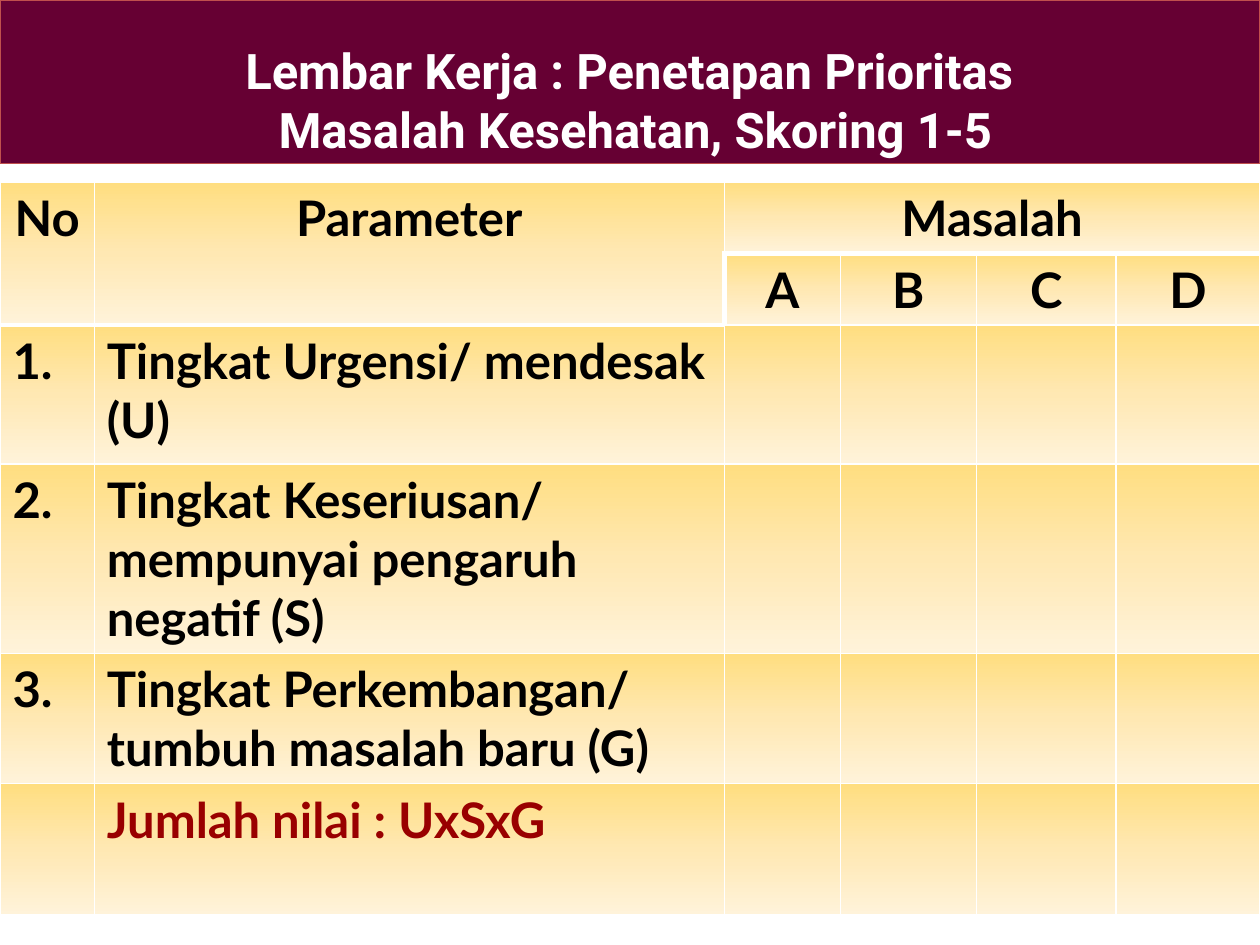
from dataclasses import dataclass

import pptx
import pptx.dml.color
import pptx.enum.shapes
import pptx.enum.text
import pptx.oxml
import pptx.oxml.ns
import pptx.presentation
import pptx.slide
import pptx.table
import pptx.text.text
import pptx.util
from pptx.dml.color import RGBColor
from pptx.util import Cm, Pt

MAROON = RGBColor(0x66, 0x00, 0x33)
BRICK = RGBColor(0xC0, 0x50, 0x4D)
WHITE = RGBColor(0xFF, 0xFF, 0xFF)
BLACK = RGBColor(0x00, 0x00, 0x00)
RED = RGBColor(0x99, 0x00, 0x00)
GOLD = RGBColor(0xFF, 0xDE, 0x80)
CREAM = RGBColor(0xFF, 0xE8, 0xB3)
IVORY = RGBColor(0xFF, 0xF3, 0xDA)

CENTER = pptx.enum.text.PP_ALIGN.CENTER
LEFT = pptx.enum.text.PP_ALIGN.LEFT
TEXT_SIZE = Pt(28)
THIN, THICK = Pt(1), Pt(3)

COLUMN_WIDTHS = [1.9, 12.7, 2.34, 2.74, 2.82, 2.9]
ROW_HEIGHTS = [1.44, 1.44, 2.8, 3.82, 2.62, 2.64]
FIRST_PROBLEM = 2
FIRST_PARAMETER = 2
TITLE = ["Lembar Kerja : Penetapan Prioritas ", "Masalah Kesehatan, Skoring 1-5"]


@dataclass(frozen=True)
class Heading:
    text: str
    row: int
    column: int
    last_row: int
    last_column: int


@dataclass(frozen=True)
class Parameter:
    number: str
    text: str
    color: RGBColor = BLACK


HEADINGS = [
    Heading("No", 0, 0, 1, 0),
    Heading("Parameter", 0, 1, 1, 1),
    Heading("Masalah", 0, 2, 0, 5),
    *(Heading(letter, 1, column, 1, column)
      for column, letter in enumerate("ABCD", FIRST_PROBLEM)),
]
PARAMETERS = [
    Parameter("1.", "Tingkat Urgensi/ mendesak (U)"),
    Parameter("2.", "Tingkat Keseriusan/ mempunyai pengaruh negatif (S)"),
    Parameter("3.", "Tingkat Perkembangan/ tumbuh masalah baru (G)"),
    Parameter("", "Jumlah nilai : UxSxG", RED),
]


def write(para: pptx.text.text._Paragraph, text: str, font: str,
          color: RGBColor, alignment: pptx.enum.text.PP_ALIGN) -> None:
    para.text = text
    para.alignment = alignment
    para.font.name = font
    para.font.size = TEXT_SIZE
    para.font.bold = True
    para.font.color.rgb = color


def write_cell(cell: pptx.table._Cell, text: str, color: RGBColor = BLACK,
               alignment: pptx.enum.text.PP_ALIGN = LEFT) -> None:
    if text:
        write(cell.text_frame.paragraphs[0], text, "Lato", color, alignment)


def edge_widths(row: int, column: int) -> dict[str, int]:
    """Thick lines set the headings off from what they head."""
    problem = column >= FIRST_PROBLEM
    thick = {
        "L": row == 1 and column == FIRST_PROBLEM,
        "R": row == 1 and column == FIRST_PROBLEM - 1,
        "T": row == (1 if problem else FIRST_PARAMETER),
        "B": row == (0 if problem else FIRST_PARAMETER - 1),
    }
    return {side: THICK if heavy else THIN for side, heavy in thick.items()}


def style_cell(cell: pptx.table._Cell, row: int, column: int) -> None:
    """Add white borders, then the gradient, in the order the schema asks."""
    namespace = pptx.oxml.ns.nsdecls("a")
    properties = cell._tc.get_or_add_tcPr()
    for side, width in edge_widths(row, column).items():
        properties.append(pptx.oxml.parse_xml(
            f'<a:ln{side} {namespace} w="{int(width)}"><a:solidFill>'
            f'<a:srgbClr val="{WHITE}"/></a:solidFill></a:ln{side}>'))
    stops = "".join(
        f'<a:gs pos="{percent * 1000}"><a:srgbClr val="{color}"/></a:gs>'
        for percent, color in [(0, GOLD), (50, CREAM), (100, IVORY)])
    properties.append(pptx.oxml.parse_xml(
        f'<a:gradFill {namespace} rotWithShape="1"><a:gsLst>{stops}</a:gsLst>'
        '<a:lin ang="5400000" scaled="0"/></a:gradFill>'))


def add_scoring_table(page: pptx.slide.Slide) -> None:
    frame = page.shapes.add_table(
        len(ROW_HEIGHTS), len(COLUMN_WIDTHS), Cm(0), Cm(3.67),
        Cm(sum(COLUMN_WIDTHS)), Cm(sum(ROW_HEIGHTS)))
    table = frame.table
    table.first_row = False
    table.horz_banding = False
    for column, width in zip(table.columns, COLUMN_WIDTHS):
        column.width = Cm(width)
    for row, height in zip(table.rows, ROW_HEIGHTS):
        row.height = Cm(height)
    for row in range(len(ROW_HEIGHTS)):
        for column in range(len(COLUMN_WIDTHS)):
            style_cell(table.cell(row, column), row, column)
    for heading in HEADINGS:
        cell = table.cell(heading.row, heading.column)
        last = table.cell(heading.last_row, heading.last_column)
        if (heading.row, heading.column) != (heading.last_row, heading.last_column):
            cell.merge(last)
        write_cell(cell, heading.text, alignment=CENTER)
    for row, parameter in enumerate(PARAMETERS, FIRST_PARAMETER):
        write_cell(table.cell(row, 0), parameter.number)
        write_cell(table.cell(row, 1), parameter.text, parameter.color)


def add_title(page: pptx.slide.Slide, width: pptx.util.Length) -> None:
    banner = page.shapes.add_shape(
        pptx.enum.shapes.MSO_SHAPE.RECTANGLE, Cm(0), Cm(0), width, Cm(3.3))
    banner.shadow.inherit = False
    banner.fill.solid()
    banner.fill.fore_color.rgb = MAROON
    banner.line.color.rgb = BRICK
    banner.line.width = Pt(0.75)

    box = page.shapes.add_textbox(Cm(1.35), Cm(0.69), Cm(22.91), Cm(2.64))
    text_frame = box.text_frame
    text_frame.word_wrap = True
    text_frame.auto_size = pptx.enum.text.MSO_AUTO_SIZE.SHAPE_TO_FIT_TEXT
    for index, line in enumerate(TITLE):
        para = text_frame.add_paragraph() if index else text_frame.paragraphs[0]
        write(para, line, "Roboto", WHITE, CENTER)


def main() -> None:
    deck = pptx.Presentation()
    deck.slide_width = Cm(25.4)
    deck.slide_height = Cm(19.05)
    page = deck.slides.add_slide(deck.slide_layouts[6])
    add_scoring_table(page)
    add_title(page, deck.slide_width)
    deck.save("out.pptx")


if __name__ == "__main__":
    main()
